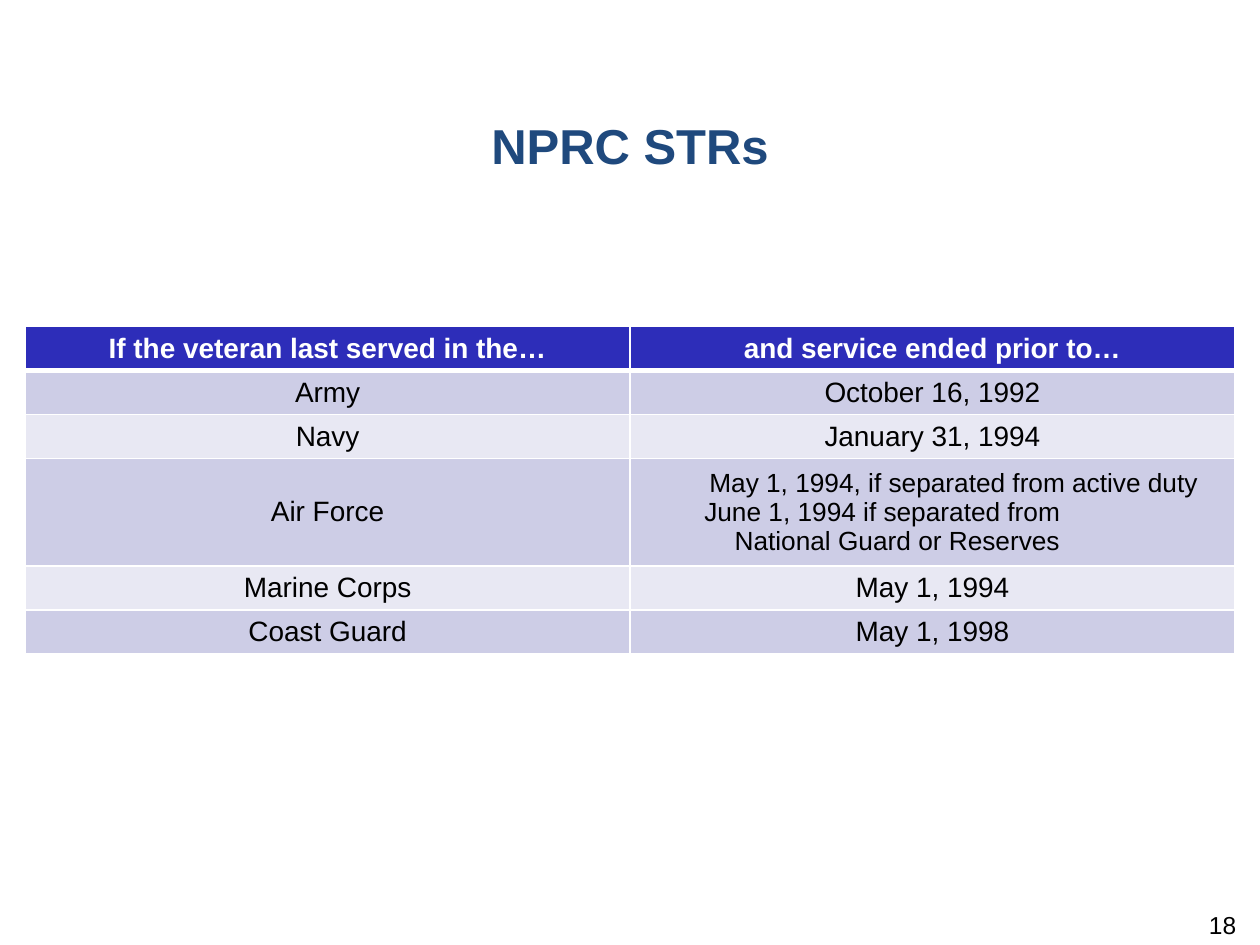
from lxml.etree import SubElement
from pptx import Presentation
from pptx.dml.color import RGBColor
from pptx.enum.text import MSO_ANCHOR, PP_ALIGN
from pptx.oxml.ns import qn
from pptx.util import Inches, Pt

NAVY = RGBColor(0x1F, 0x49, 0x7D)
BLUE = RGBColor(0x2D, 0x2D, 0xB9)
DARK = RGBColor(0xCD, 0xCD, 0xE6)
PALE = RGBColor(0xE8, 0xE8, 0xF3)
WHITE = RGBColor(0xFF, 0xFF, 0xFF)
BLACK = RGBColor(0, 0, 0)

ROWS = [
    ("If the veteran last served in the…", "and service ended prior to…"),
    ("Army", "October 16, 1992"),
    ("Navy", "January 31, 1994"),
    ("Air Force", "May 1, 1994, if separated from active duty\n"
                  "June 1, 1994 if separated from\n"
                  "National Guard or Reserves"),
    ("Marine Corps", "May 1, 1994"),
    ("Coast Guard", "May 1, 1998"),
]
INDENTS = (0.55, 0.51, 0.75)  # inches, for the lines of the Air Force dates


def style(par, size, color, bold=False, align=PP_ALIGN.CENTER):
    par.alignment = align
    font = par.font
    font.name, font.size, font.bold = "Arial", Pt(size), bold
    font.color.rgb = color


def border(cell, widths):
    """Draw white cell edges; widths are points for left, right, top, bottom."""
    props = cell._tc.get_or_add_tcPr()
    for side, width in zip("LRTB", widths):
        line = SubElement(props, qn(f"a:ln{side}"), w=str(Pt(width)))
        fill = SubElement(line, qn("a:solidFill"))
        SubElement(fill, qn("a:srgbClr"), val=str(WHITE))


prs = Presentation()
prs.slide_width, prs.slide_height = Inches(10), Inches(7.5)
wide = prs.slide_width
slide = prs.slides.add_slide(prs.slide_layouts[5])

title = slide.shapes.title
title.left, title.top = 0, Inches(0.87)
title.width, title.height = wide, Inches(1.19)
title.text_frame.text = "NPRC STRs"
title.text_frame.vertical_anchor = MSO_ANCHOR.TOP
style(title.text_frame.paragraphs[0], 28, NAVY, bold=True)

# Table: two equal columns inside a margin of 2% of the slide's width
edge = int(wide * 0.02)
frame = slide.shapes.add_table(len(ROWS), 2, edge, Inches(2.59),
                               wide - 2 * edge, Inches(2.59))
table = frame.table
for r, texts in enumerate(ROWS):
    table.rows[r].height = Inches(0.85 if "\n" in texts[1] else 0.35)
    for c, text in enumerate(texts):
        cell = table.cell(r, c)
        border(cell, (1, 1, 3 if r == 1 else 1, 3 if r == 0 else 1))
        cell.fill.solid()
        cell.fill.fore_color.rgb = BLUE if r == 0 else DARK if r % 2 else PALE
        cell.vertical_anchor = MSO_ANCHOR.MIDDLE
        cell.margin_left = cell.margin_right = Inches(0.08)
        cell.margin_top = cell.margin_bottom = Inches(0.04)
        cell.text_frame.text = text
        pars = cell.text_frame.paragraphs
        if len(pars) > 1:
            for par, indent in zip(pars, INDENTS):
                par._p.get_or_add_pPr().set("marL", str(Inches(indent)))
                style(par, 15, BLACK, align=PP_ALIGN.LEFT)
        else:
            style(pars[0], 16, BLACK if r else WHITE, bold=r == 0)

# Page number
page = slide.shapes.add_textbox(Inches(7.58), Inches(7.22),
                                Inches(2.33), Inches(0.4)).text_frame
page.word_wrap = True
page.margin_top = 0
page.text = "18"
style(page.paragraphs[0], 14, BLACK, align=PP_ALIGN.RIGHT)
page.paragraphs[0].space_after = Pt(6)

prs.save("out.pptx")
